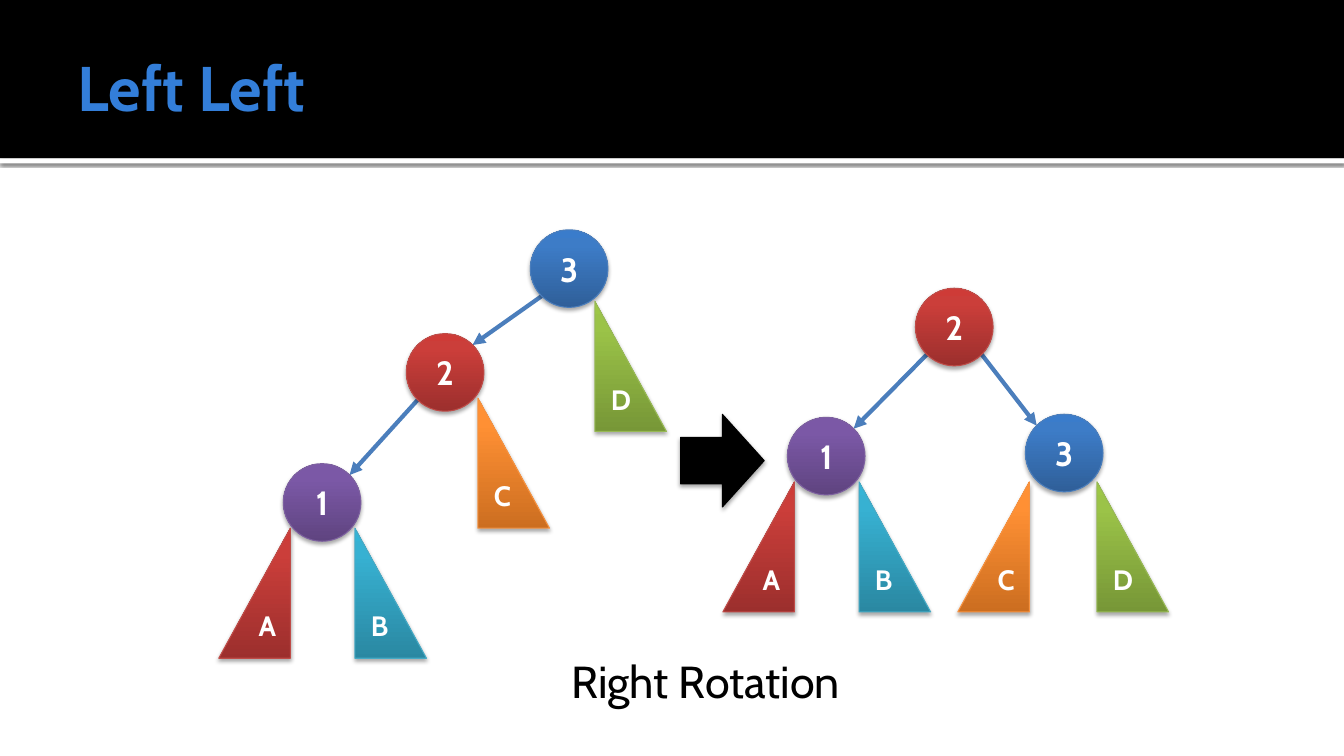
from copy import deepcopy
from dataclasses import dataclass
from math import sqrt

from lxml import etree
from pptx import Presentation
from pptx.dml.color import RGBColor
from pptx.enum.shapes import MSO_CONNECTOR, MSO_SHAPE
from pptx.enum.text import MSO_ANCHOR, MSO_AUTO_SIZE, PP_ALIGN
from pptx.oxml.ns import qn
from pptx.util import Inches, Pt

RECT, OVAL = MSO_SHAPE.RECTANGLE, MSO_SHAPE.OVAL
TRIANGLE, ARROW = MSO_SHAPE.RIGHT_TRIANGLE, MSO_SHAPE.RIGHT_ARROW
STRAIGHT = MSO_CONNECTOR.STRAIGHT
MIDDLE = MSO_ANCHOR.MIDDLE
NO_FIT, GROW = MSO_AUTO_SIZE.NONE, MSO_AUTO_SIZE.SHAPE_TO_FIT_TEXT
LEFT, CENTER = PP_ALIGN.LEFT, PP_ALIGN.CENTER
FONT = "Cabin"
DIAMETER = 0.77
TRIANGLE_W, TRIANGLE_H = 0.71, 1.29


@dataclass(frozen=True)
class Shade:
    bottom: str
    middle: str
    top: str
    line: str


@dataclass(frozen=True)
class Node:
    label: str
    x: float
    y: float

    def rim(self, side: int, down: int) -> tuple[float, float]:
        reach = DIAMETER / 2 / sqrt(2)
        return self.x + DIAMETER / 2 + side * reach, self.y + DIAMETER / 2 + down * reach


@dataclass(frozen=True)
class Subtree:
    label: str
    x: float
    y: float
    flipped: bool = False


@dataclass(frozen=True)
class Tree:
    nodes: list[Node]
    edges: list[tuple[int, int]]
    subtrees: list[Subtree]


BLUE = Shade("2F5F99", "3D7CC7", "3A7CCB", "4B7EBC")
RED = Shade("9C2F2D", "CB3E3A", "CE3B37", "BF4C48")
PURPLE = Shade("5F4480", "7B58A6", "7C57A8", "7D60A0")
TEAL = Shade("2A88A2", "37B1D2", "34B4D6", "46AAC5")
ORANGE = Shade("CC6E20", "FF9034", "FF9136", "F69240")
GREEN = Shade("779737", "9BC348", "9DC746", "98B955")
SHADES = {"1": PURPLE, "2": RED, "3": BLUE, "A": RED, "B": TEAL, "C": ORANGE, "D": GREEN}

TREES = [
    Tree(
        [Node("3", 5.26, 2.28), Node("2", 4.03, 3.31), Node("1", 2.81, 4.6)],
        [(0, 1), (1, 2)],
        [Subtree("B", 3.52, 5.24), Subtree("A", 2.17, 5.24, True),
         Subtree("C", 4.74, 3.95), Subtree("D", 5.9, 2.99)],
    ),
    Tree(
        [Node("3", 10.17, 4.11), Node("2", 9.08, 2.86), Node("1", 7.81, 4.14)],
        [(1, 0), (1, 2)],
        [Subtree("B", 8.52, 4.78), Subtree("A", 7.17, 4.78, True),
         Subtree("C", 9.5, 4.78, True), Subtree("D", 10.88, 4.78)],
    ),
]


def rgb(color: str) -> RGBColor:
    return RGBColor.from_string(color)


def write(tf, text: str, *, size: float, color: str, bold: bool = False, align=CENTER) -> None:
    p = tf.paragraphs[0]
    p.alignment = align
    r = p.add_run()
    r.text = text
    r.font.name = FONT
    r.font.size = Pt(size)
    r.font.bold = bold
    r.font.color.rgb = rgb(color)


def add_shadow(sp, *, blur: float, distance: float, opacity: int) -> None:
    sp.shadow.inherit = False
    effects = sp._element.spPr.find(qn("a:effectLst"))
    shadow = etree.SubElement(effects, qn("a:outerShdw"), blurRad=str(Pt(blur)),
                              dist=str(Pt(distance)), dir="5400000", rotWithShape="0")
    color = etree.SubElement(shadow, qn("a:srgbClr"), val="000000")
    etree.SubElement(color, qn("a:alpha"), val=str(opacity * 1000))


def add_block(shapes, kind, x: float, y: float, w: float, h: float, *,
              fill: str | None = None, line: str | None = None):
    sp = shapes.add_shape(kind, Inches(x), Inches(y), Inches(w), Inches(h))
    sp.shadow.inherit = False
    if fill:
        sp.fill.solid()
        sp.fill.fore_color.rgb = rgb(fill)
    if line:
        sp.line.color.rgb = rgb(line)
        sp.line.width = Pt(0.75)
    else:
        sp.line.fill.background()
    return sp


def add_shaded(shapes, kind, label: str, x: float, y: float, w: float, h: float, size: float):
    shade = SHADES[label]
    sp = add_block(shapes, kind, x, y, w, h, line=shade.line)
    sp.fill.gradient()
    sp.fill.gradient_angle = 90
    first, last = sp.fill.gradient_stops
    first.color.rgb, first.position = rgb(shade.middle), 0.8
    last.color.rgb, last.position = rgb(shade.top), 1
    stops = sp._element.spPr.find(qn("a:gradFill")).find(qn("a:gsLst"))
    stops.insert(0, deepcopy(stops[0]))
    bottom = sp.fill.gradient_stops[0]
    bottom.color.rgb, bottom.position = rgb(shade.bottom), 0
    add_shadow(sp, blur=3.1, distance=1.8, opacity=35)
    sp.text_frame.vertical_anchor = MIDDLE
    write(sp.text_frame, label, size=size, color="FFFFFF", bold=True)
    return sp


def add_edge(shapes, parent: Node, child: Node) -> None:
    side = 1 if child.x > parent.x else -1
    ends = (*parent.rim(side, 1), *child.rim(-side, -1))
    cxn = shapes.add_connector(STRAIGHT, *map(Inches, ends))
    cxn.line.color.rgb = rgb(BLUE.line)
    cxn.line.width = Pt(3)
    etree.SubElement(cxn.line._get_or_add_ln(), qn("a:tailEnd"), type="triangle")
    etree.SubElement(cxn._element.spPr, qn("a:effectLst"))


def add_tree(s, tree: Tree) -> None:
    shapes = s.shapes.add_group_shape().shapes
    for parent, child in tree.edges:
        add_edge(shapes, tree.nodes[parent], tree.nodes[child])
    for node in tree.nodes:
        add_shaded(shapes, OVAL, node.label, node.x, node.y, DIAMETER, DIAMETER, 24)
    for sub in tree.subtrees:
        sp = add_shaded(shapes, TRIANGLE, sub.label, sub.x, sub.y, TRIANGLE_W, TRIANGLE_H, 20)
        if sub.flipped:
            sp._element.spPr.find(qn("a:xfrm")).set("flipH", "1")


def add_header(s, text: str) -> None:
    rule = add_block(s.shapes, RECT, 0, 1.57, 13.33, 0.05, fill="FFFFFF")
    add_shadow(rule, blur=2.5, distance=0.8, opacity=60)
    add_block(s.shapes, RECT, 0, 0, 13.33, 1.57, fill="000000")
    title = s.shapes.title
    s.shapes._spTree.append(title._element)
    title.left, title.top, title.width, title.height = map(Inches, (0.67, 0.17, 12, 1.37))
    tf = title.text_frame
    tf.auto_size = NO_FIT
    tf.vertical_anchor = MIDDLE
    tf.margin_left, tf.margin_right = Inches(0.1), Inches(0.05)
    tf.margin_top = tf.margin_bottom = Inches(0.05)
    write(tf, text, size=45, color="337ED9", bold=True, align=LEFT)


def main() -> None:
    prs = Presentation()
    prs.slide_width, prs.slide_height = Inches(13.33), Inches(7.5)
    s = prs.slides.add_slide(prs.slide_layouts[5])
    add_header(s, "Left Left")
    for tree in TREES:
        add_tree(s, tree)
    arrow = add_block(s.shapes, ARROW, 6.75, 4.11, 0.83, 0.92, fill="000000", line="000000")
    add_shadow(arrow, blur=3.1, distance=1.8, opacity=35)
    caption = s.shapes.add_textbox(*map(Inches, (5.25, 6.44, 3.5, 0.64)))
    caption.text_frame.word_wrap = True
    caption.text_frame.auto_size = GROW
    write(caption.text_frame, "Right Rotation", size=32, color="000000")
    prs.save("out.pptx")


if __name__ == "__main__":
    main()
